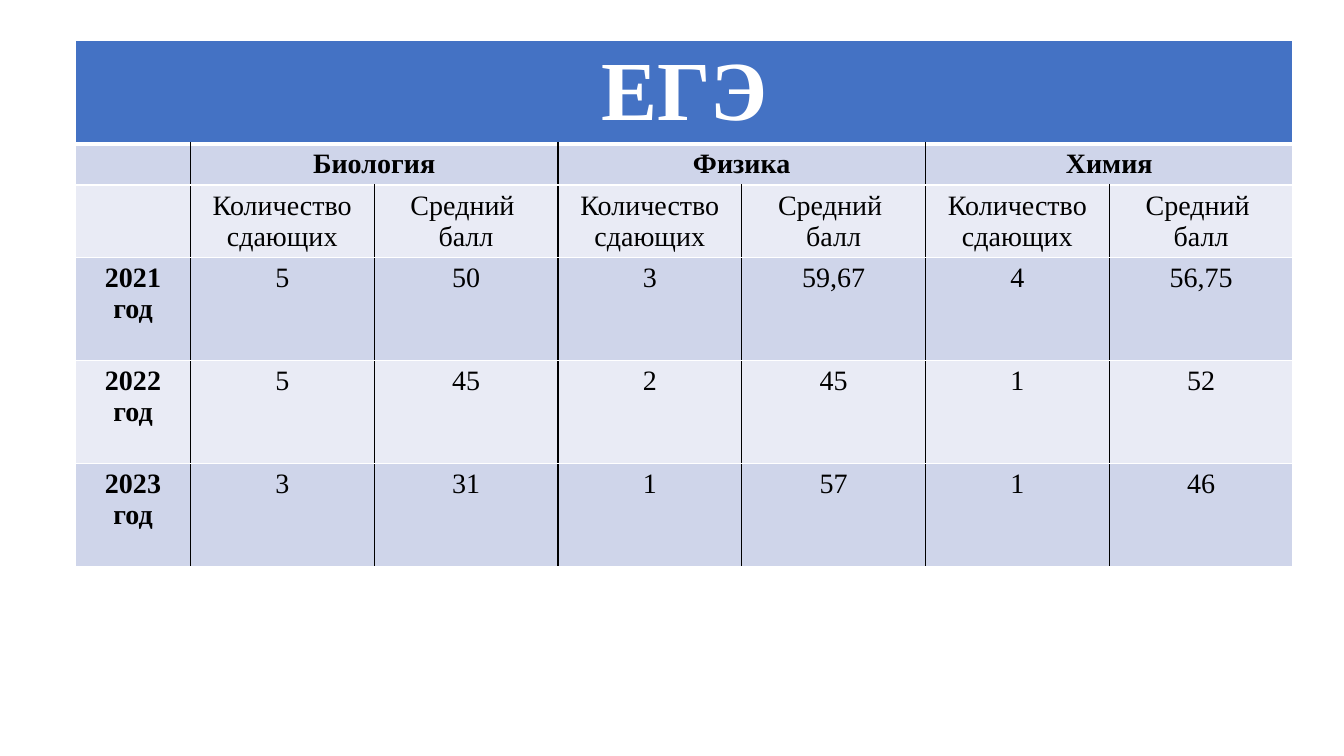
from lxml.etree import SubElement
from pptx import Presentation
from pptx.dml.color import RGBColor
from pptx.enum.text import PP_ALIGN as Align
from pptx.oxml.ns import qn
from pptx.util import Pt

BLUE = RGBColor(0x44, 0x72, 0xC4)
BAND_DARK = RGBColor(0xCF, 0xD5, 0xEA)
BAND_LIGHT = RGBColor(0xE9, 0xEB, 0xF5)
WHITE = RGBColor(0xFF, 0xFF, 0xFF)
BLACK = RGBColor(0x00, 0x00, 0x00)

YEAR_WIDTH = 82
VALUE_WIDTH = 131.3
ROW_HEIGHTS = [73, 29.3, 51.5, 73.6, 73.6, 73.6]
ROWS = [
    ["ЕГЭ"] + [""] * 6,
    ["", "Биология", "", "Физика", "", "Химия", ""],
    [""] + ["Количество сдающих", "Средний \nбалл"] * 3,
    ["2021 год", "5", "50", "3", "59,67", "4", "56,75"],
    ["2022 год", "5", "45", "2", "45", "1", "52"],
    ["2023 год", "3", "31", "1", "57", "1", "46"],
]
LAST_COLUMN = 6


def add_border(cell, side, color, width):
    line = SubElement(cell._tc.get_or_add_tcPr(), qn(f"a:ln{side}"), w=str(Pt(width)))
    fill = SubElement(line, qn("a:solidFill"))
    SubElement(fill, qn("a:srgbClr"), val=str(color))


deck = Presentation()
deck.slide_width = Pt(960)
deck.slide_height = Pt(540)
page = deck.slides.add_slide(deck.slide_layouts[6])

frame = page.shapes.add_table(
    len(ROWS), LAST_COLUMN + 1, Pt(54), Pt(29),
    Pt(YEAR_WIDTH + LAST_COLUMN * VALUE_WIDTH), Pt(sum(ROW_HEIGHTS)))
table = frame.table
for index, column in enumerate(table.columns):
    column.width = Pt(VALUE_WIDTH if index else YEAR_WIDTH)
for row, height in zip(table.rows, ROW_HEIGHTS):
    row.height = Pt(height)

table.cell(0, 0).merge(table.cell(0, LAST_COLUMN))
for first in (1, 3, 5):
    table.cell(1, first).merge(table.cell(1, first + 1))

for r, texts in enumerate(ROWS):
    is_title = r == 0
    for c, text in enumerate(texts):
        cell = table.cell(r, c)
        end = c + cell.span_width - 1 if cell.is_merge_origin else c
        add_border(cell, "L", WHITE if is_title or c == 0 else BLACK, 1)
        add_border(cell, "R", WHITE if is_title or end == LAST_COLUMN else BLACK, 1)
        add_border(cell, "T", WHITE, 1)
        add_border(cell, "B", WHITE, 3 if is_title else 1)
        cell.fill.solid()
        cell.fill.fore_color.rgb = BLUE if is_title else BAND_DARK if r % 2 else BAND_LIGHT
        if not text:
            continue
        for number, words in enumerate(text.split("\n")):
            body = cell.text_frame
            para = body.add_paragraph() if number else body.paragraphs[0]
            para.alignment = Align.CENTER
            span = para.add_run()
            span.text = words
            span.font.name = "Times New Roman"
            span.font.size = Pt(60 if is_title else 20)
            span.font.bold = r < 2 or c == 0
            span.font.color.rgb = WHITE if is_title else BLACK

deck.save("out.pptx")
